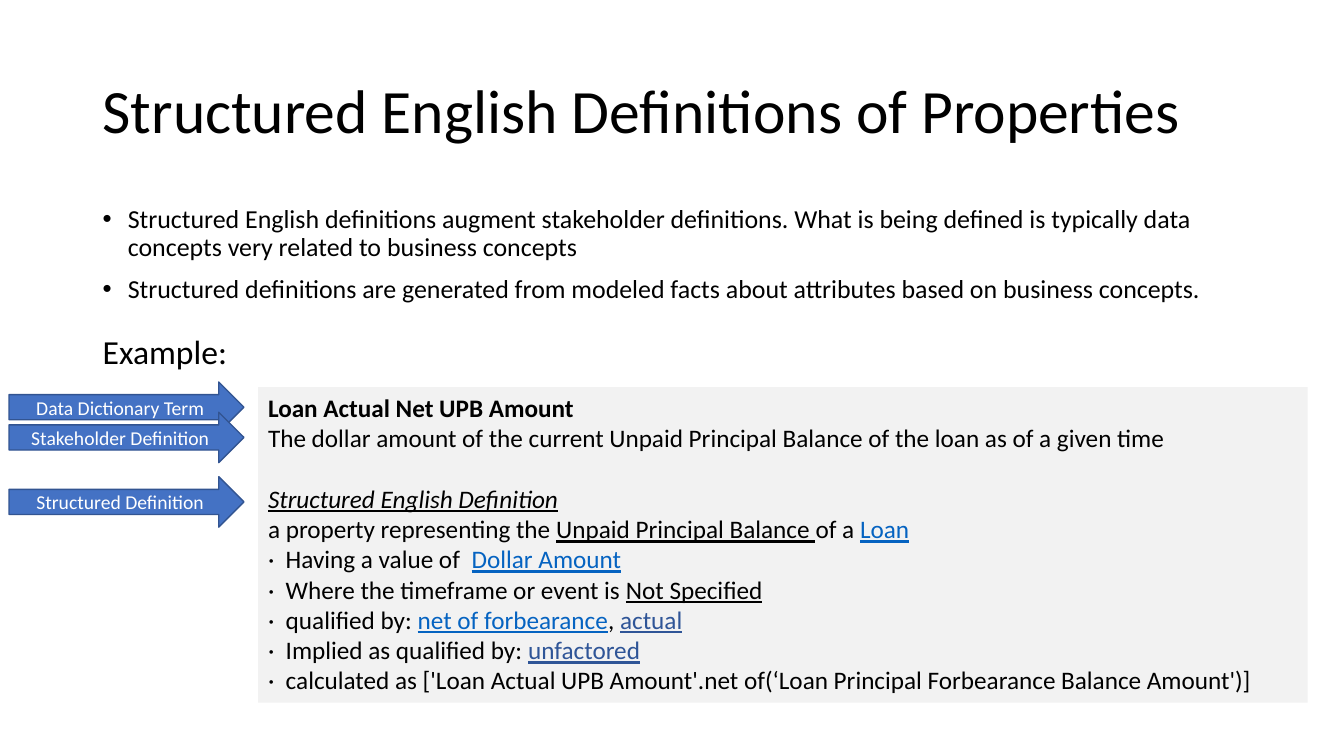
from dataclasses import dataclass

from lxml.etree import SubElement
from pptx import Presentation
from pptx.dml.color import RGBColor
from pptx.enum.shapes import MSO_SHAPE as Preset
from pptx.enum.text import MSO_ANCHOR as Anchor, PP_ALIGN as Align
from pptx.oxml.ns import qn
from pptx.util import Inches, Pt

FONT = "Calibri"
BLACK = RGBColor(0x00, 0x00, 0x00)
WHITE = RGBColor(0xFF, 0xFF, 0xFF)
PANEL_GREY = RGBColor(0xF2, 0xF2, 0xF2)
ARROW_BLUE = RGBColor(0x44, 0x72, 0xC4)
ARROW_EDGE = RGBColor(0x32, 0x54, 0x91)
LINK_BLUE = RGBColor(0x05, 0x63, 0xC1)
TERM_BLUE = RGBColor(0x2F, 0x55, 0x97)


@dataclass(frozen=True)
class Span:
    text: str
    size: float = 18
    color: RGBColor = BLACK
    bold: bool = False
    italic: bool = False
    underline: bool = False


@dataclass(frozen=True)
class Line:
    spans: tuple[Span, ...]
    align: Align = Align.LEFT
    spacing: float = 1.0
    before: float = 0
    bullet: bool = False


@dataclass(frozen=True)
class Pointer:
    label: str
    top: float


def link(text: str, color: RGBColor = LINK_BLUE) -> Span:
    return Span(text, color=color, underline=True)


def write(frame, lines: list[Line], anchor: Anchor = Anchor.TOP, wrap: bool = True) -> None:
    """Fill a text frame with lines, run by run."""
    frame.word_wrap = wrap
    frame.vertical_anchor = anchor
    for index, line in enumerate(lines):
        paragraph = frame.add_paragraph() if index else frame.paragraphs[0]
        paragraph.alignment = line.align
        paragraph.line_spacing = line.spacing
        paragraph.space_before = Pt(line.before)
        if line.bullet:
            properties = paragraph._p.get_or_add_pPr()
            properties.set("marL", str(Inches(0.25)))
            properties.set("indent", str(Inches(-0.25)))
            SubElement(properties, qn("a:buFont"), typeface="Arial")
            SubElement(properties, qn("a:buChar"), char="•")
        for span in line.spans:
            run = paragraph.add_run()
            run.text = span.text
            font = run.font
            font.name, font.size = FONT, Pt(span.size)
            font.bold, font.italic, font.underline = span.bold, span.italic, span.underline
            font.color.rgb = span.color


def add_text(slide, left: float, top: float, width: float, height: float,
             lines: list[Line], anchor: Anchor = Anchor.TOP, wrap: bool = True) -> None:
    box = slide.shapes.add_textbox(Inches(left), Inches(top), Inches(width), Inches(height))
    write(box.text_frame, lines, anchor, wrap)


def add_panel(slide, lines: list[Line]) -> None:
    panel = slide.shapes.add_shape(
        Preset.RECTANGLE, Inches(2.56), Inches(3.84), Inches(10.41), Inches(3.13))
    panel.shadow.inherit = False
    panel.fill.solid()
    panel.fill.fore_color.rgb = PANEL_GREY
    panel.line.fill.background()
    write(panel.text_frame, lines)


def add_pointer(slide, pointer: Pointer) -> None:
    arrow = slide.shapes.add_shape(
        Preset.RIGHT_ARROW, Inches(0.09), Inches(pointer.top), Inches(2.33), Inches(0.5))
    arrow.shadow.inherit = False
    arrow.fill.solid()
    arrow.fill.fore_color.rgb = ARROW_BLUE
    arrow.line.color.rgb = ARROW_EDGE
    arrow.line.width = Pt(1)
    label = Span(pointer.label, size=14, color=WHITE)
    write(arrow.text_frame, [Line((label,), Align.CENTER)], Anchor.MIDDLE)


TITLE = Span("Structured English Definitions of Properties", size=44)
POINTS = [
    "Structured English definitions augment stakeholder definitions. What is being defined "
    "is typically data concepts very related to business concepts",
    "Structured definitions are generated from modeled facts about attributes based on "
    "business concepts.",
]
DEFINITION = [
    Line((Span("Loan Actual Net UPB Amount", bold=True),)),
    Line((Span("The dollar amount of the current Unpaid Principal Balance of the loan "
               "as of a given time"),)),
    Line((Span("Structured English Definition", italic=True, underline=True),), before=22),
    Line((Span("a property representing the "), link("Unpaid Principal Balance ", BLACK),
          Span("of a "), link("Loan"))),
    Line((Span("·  Having a value of  "), link("Dollar Amount"))),
    Line((Span("·  Where the timeframe or event is "), link("Not Specified", BLACK))),
    Line((Span("·  qualified by: "), link("net of forbearance"), Span(", "),
          link("actual", TERM_BLUE))),
    Line((Span("·  Implied as qualified by: "), link("unfactored", TERM_BLUE))),
    Line((Span("·  calculated as ['Loan Actual UPB Amount'.net of("
               "‘Loan Principal Forbearance Balance Amount')]"),)),
]
POINTERS = [
    Pointer("Data Dictionary Term", 3.79),
    Pointer("Stakeholder Definition", 4.09),
    Pointer("Structured Definition", 4.73),
]


def main() -> None:
    deck = Presentation()
    deck.slide_width, deck.slide_height = Inches(13.33), Inches(7.5)
    slide = deck.slides.add_slide(deck.slide_layouts[6])

    # Title and introduction
    add_text(slide, 0.92, 0.4, 11.5, 1.45, [Line((TITLE,), spacing=0.9)], Anchor.MIDDLE)
    add_text(slide, 0.92, 2, 11.5, 1.22, [
        Line((Span(point, size=18.5),), spacing=0.9, before=10, bullet=True)
        for point in POINTS])

    # Worked example with its pointers
    add_panel(slide, DEFINITION)
    add_text(slide, 0.92, 3.23, 1.45, 0.5, [Line((Span("Example:", size=24),))], wrap=False)
    for pointer in POINTERS:
        add_pointer(slide, pointer)

    deck.save("out.pptx")


if __name__ == "__main__":
    main()
